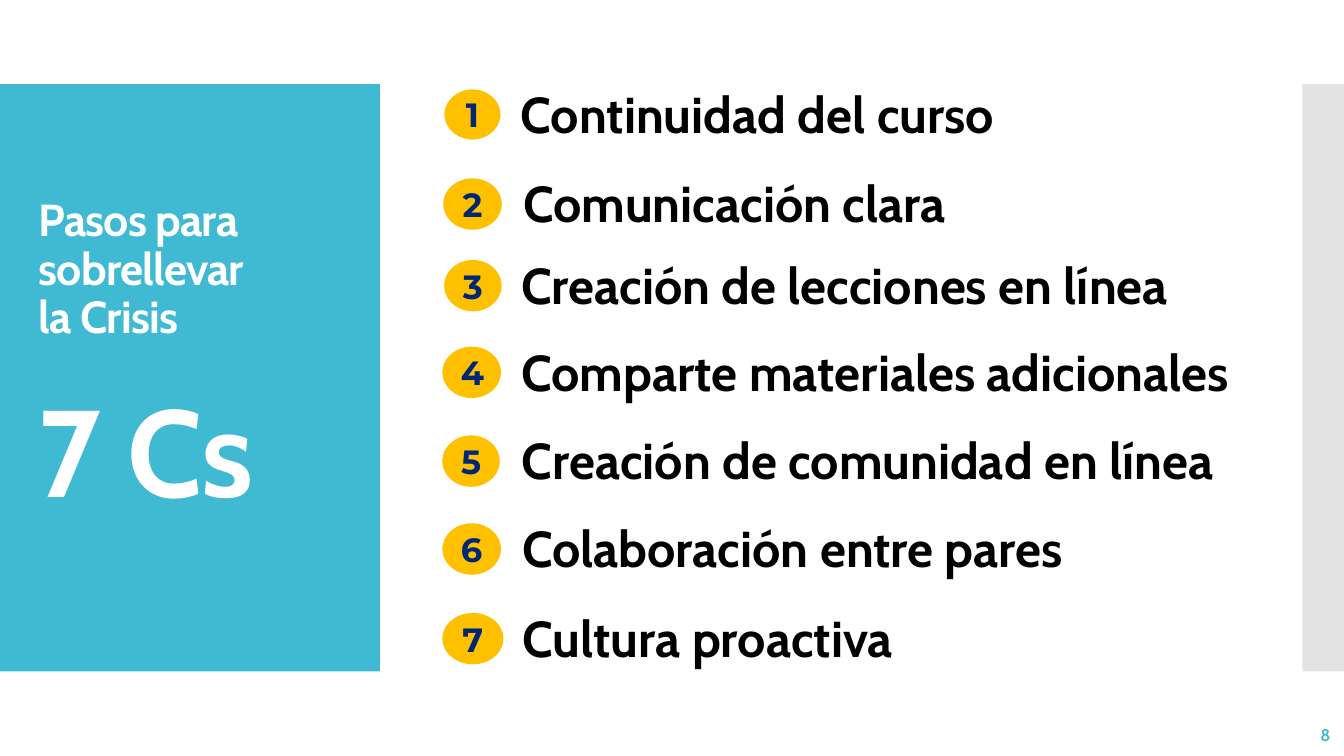
from dataclasses import dataclass

from lxml import etree
from pptx import Presentation
from pptx.dml.color import RGBColor
from pptx.enum import shapes, text
from pptx.oxml import ns
from pptx.util import Pt


@dataclass(frozen=True)
class Theme:
    teal: str = "40BAD2"
    gray: str = "C8C8C8"
    gold: str = "FFC000"
    navy: str = "002776"
    black: str = "000000"
    white: str = "FFFFFF"
    body_font: str = "Cabin"
    number_font: str = "Montserrat"
    page_size: int = 12
    number_size: int = 24
    heading_size: int = 32
    step_size: int = 36
    count_size: int = 88


theme = Theme()


def write(frame, content, size, color, font=theme.body_font, align=text.PP_ALIGN.LEFT,
          anchor=text.MSO_ANCHOR.TOP, line=None, before=None, spacing=None, more=False):
    frame.word_wrap = True
    frame.vertical_anchor = anchor
    paragraph = frame.add_paragraph() if more else frame.paragraphs[0]
    paragraph.alignment = align
    if line:
        paragraph.line_spacing = line
    if before:
        paragraph.space_before = Pt(before)
    run = paragraph.add_run()
    run.text = content
    run.font.name = font
    run.font.size = Pt(size)
    run.font.bold = True
    run.font.color.rgb = RGBColor.from_string(color)
    if spacing:
        run.font._element.set("spc", str(spacing))


def add_filled(parent, kind, box, color):
    shape = parent.add_shape(kind, *map(Pt, box))
    shape.shadow.inherit = False
    shape.fill.solid()
    shape.fill.fore_color.rgb = RGBColor.from_string(color)
    shape.line.fill.background()
    return shape


deck = Presentation()
deck.slide_width, deck.slide_height = Pt(960), Pt(540)
slide = deck.slides.add_slide(deck.slide_layouts[6])

add_filled(slide.shapes, shapes.MSO_SHAPE.RECTANGLE, (0, 60, 271.3, 419.5), theme.teal)
side_band = add_filled(slide.shapes, shapes.MSO_SHAPE.RECTANGLE, (930.3, 60, 29.7, 419.5), theme.gray)
band_color = side_band.fill._xPr.find(".//" + ns.qn("a:srgbClr"))
etree.SubElement(band_color, ns.qn("a:alpha"), val="50000")

steps = [
    ("Continuidad del curso", 317, 63.4, 41, 365, 399),
    ("Comunicación clara", 316.6, 127.4, 41.8, 366.6, 461.5),
    ("Creación de lecciones en línea", 317.3, 185.7, 41, 365.2, 486.7),
    ("Comparte materiales adicionales", 316, 247.6, 41.8, 365.3, 568),
    ("Creación de comunidad en línea", 316, 311, 41, 365.5, 522),
    ("Colaboración entre pares", 316, 373.8, 41.8, 365.8, 461.5),
    ("Cultura proactiva", 316, 437.8, 43.6, 366.3, 558.7),
]
for number, (step, oval_left, top, oval_width, step_left, step_width) in enumerate(steps, 1):
    row = slide.shapes.add_group_shape().shapes
    badge = add_filled(row, shapes.MSO_SHAPE.OVAL, (oval_left, top, oval_width, 36.7), theme.gold)
    if number == 1:
        badge.line.color.rgb = RGBColor.from_string(theme.white)
        badge.line.width = Pt(0.85)
    write(badge.text_frame, str(number), theme.number_size, theme.navy, font=theme.number_font,
          align=text.PP_ALIGN.CENTER, anchor=text.MSO_ANCHOR.MIDDLE)
    label = row.add_textbox(Pt(step_left), Pt(top - 7.8), Pt(step_width), Pt(51))
    write(label.text_frame, step, theme.step_size, theme.black)

page = slide.shapes.add_textbox(Pt(837.4), Pt(510.5), Pt(120), Pt(28.8))
write(page.text_frame, "8", theme.page_size, theme.teal,
      align=text.PP_ALIGN.RIGHT, anchor=text.MSO_ANCHOR.MIDDLE)

heading = slide.shapes.add_textbox(Pt(20.6), Pt(46), Pt(232), Pt(424)).text_frame
heading_lines = [
    ("Pasos para sobrellevar", theme.heading_size, None),
    ("la Crisis", theme.heading_size, None),
    ("7 Cs", theme.count_size, 34.5),
]
for index, (words, size, before) in enumerate(heading_lines):
    write(heading, words, size, theme.white, anchor=text.MSO_ANCHOR.MIDDLE,
          line=0.9, before=before, spacing=-60, more=index > 0)

deck.save("out.pptx")
